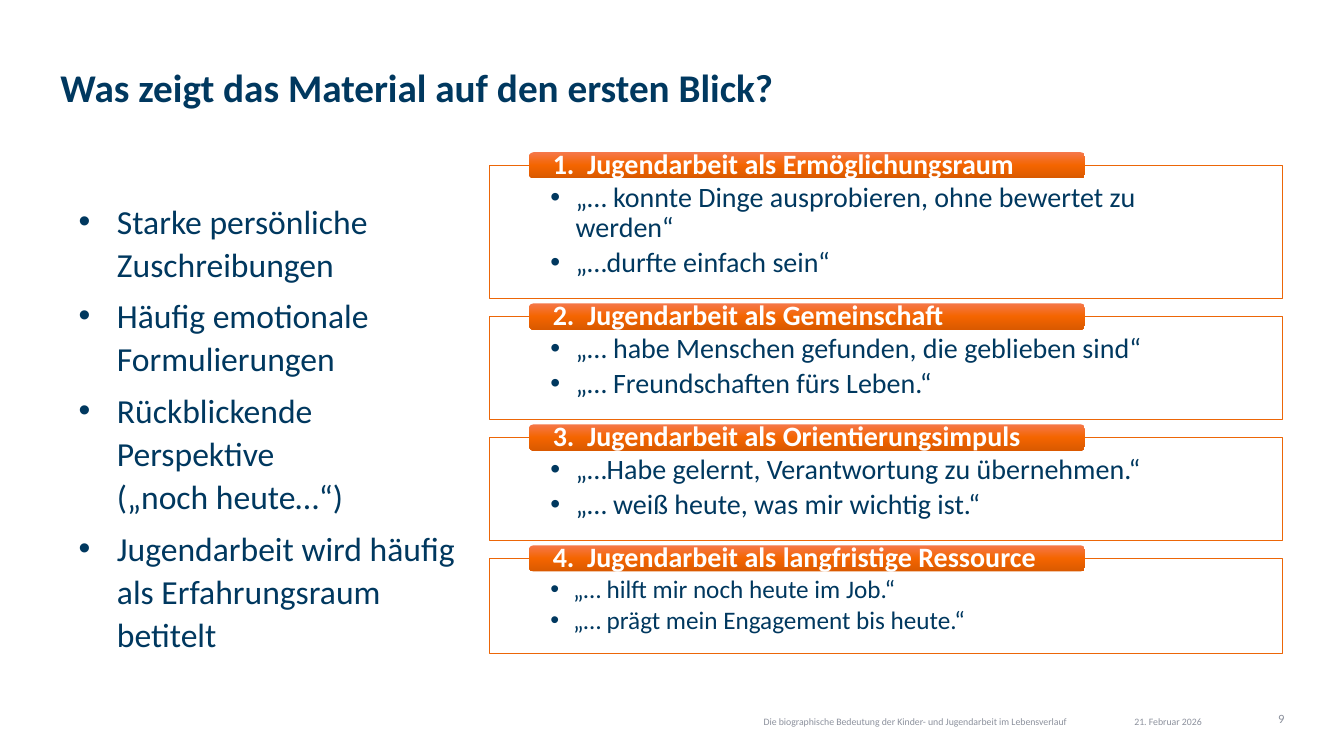
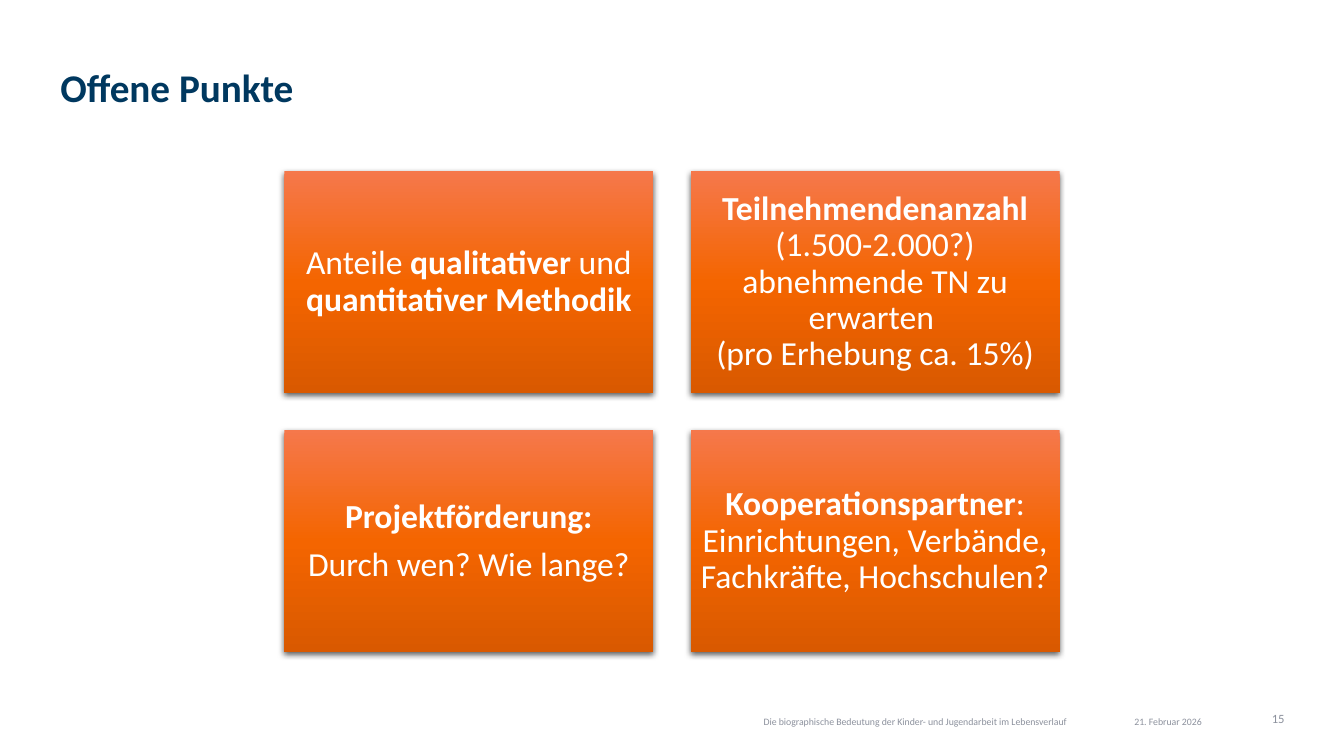
from copy import deepcopy

from lxml.etree import SubElement
from pptx import Presentation
from pptx.dml.color import RGBColor
from pptx.enum.shapes import MSO_SHAPE
from pptx.enum.text import MSO_ANCHOR, PP_ALIGN
from pptx.oxml.ns import qn
from pptx.util import Inches, Pt

# Shared colours and text styles
NAVY, GREY, WHITE, ORANGE = "00385F", "8C919D", "FFFFFF", "EC6608"
FADE = ((0, "F5784B"), (0.5, "F46500"), (1, "D95900"))
TITLE = dict(size=28, hue=NAVY, bold=True)
FOOT = dict(size=7, hue=GREY, after=6)
NOTE = "Die biographische Bedeutung der Kinder- und Jugendarbeit im Lebensverlauf"
DATE = "21. Februar 2026"


def paint(color, code):
    color.rgb = RGBColor.from_string(code)


def apply(target, values):
    for name, value in values.items():
        setattr(target, name, value)


def write(shape, paras, size, hue, bold=False, align=PP_ALIGN.LEFT, lines=0.9,
          after=0, hang=0, bullet=False, inset=(0, 0, 0, 0),
          anchor=MSO_ANCHOR.TOP):
    """Fill a shape; each paragraph is a string or a list of (text, bold)."""
    frame = shape.text_frame
    sides = ("margin_left", "margin_top", "margin_right", "margin_bottom")
    apply(frame, dict(zip(sides, map(Inches, inset))))
    apply(frame, dict(word_wrap=True, vertical_anchor=anchor))
    for i, runs in enumerate(paras):
        para = frame.add_paragraph() if i else frame.paragraphs[0]
        props = para._p.get_or_add_pPr()
        if hang:
            props.set("marL", str(Inches(hang)))
            props.set("indent", str(-Inches(hang)))
        if bullet:
            SubElement(props, qn("a:buFont")).set("typeface", "Arial")
            SubElement(props, qn("a:buChar")).set("char", "•")
        apply(para, dict(alignment=align, line_spacing=lines,
                         space_before=Pt(0), space_after=Pt(after)))
        if isinstance(runs, str):
            runs = [(runs, bold)]
        for text, strong in runs:
            for j, part in enumerate(text.split("\n")):
                if j:
                    para.add_line_break()
                run = para.add_run()
                run.text = part
                apply(run.font, dict(name="Calibri", size=Pt(size), bold=strong))
                paint(run.font.color, hue)


def label(slide, box, paras, **style):
    write(slide.shapes.add_textbox(*map(Inches, box)), paras, **style)


def block(slide, box, kind=MSO_SHAPE.RECTANGLE):
    shape = slide.shapes.add_shape(kind, *map(Inches, box))
    shape.shadow.inherit = False
    return shape


def shade(shape):
    """Orange fade from top to bottom, without outline."""
    shape.line.fill.background()
    fill = shape.fill
    fill.gradient()
    fill.gradient_angle = 270
    stops = shape._element.spPr.find(".//" + qn("a:gsLst"))
    stops.insert(1, deepcopy(stops[0]))
    for stop, (place, code) in zip(fill.gradient_stops, FADE):
        stop.position = place
        paint(stop.color, code)


def lift(shape):
    """Soft drop shadow."""
    effects = shape._element.spPr.find(qn("a:effectLst"))
    outer = SubElement(effects, qn("a:outerShdw"), blurRad=str(Pt(4.5)),
                       dist=str(Pt(1.5)), dir="5400000", rotWithShape="0")
    black = SubElement(outer, qn("a:srgbClr"), val="000000")
    SubElement(black, qn("a:alpha"), val="63000")


def start(deck, title, number):
    """Slide with title and footer."""
    slide = deck.slides.add_slide(deck.slide_layouts[6])
    label(slide, (0.6, 0.68, 12.13, 0.63), [title], **TITLE)
    label(slide, (10.76, 7.06, 1.65, 0.16), [DATE], align=PP_ALIGN.CENTER,
          inset=(0, 0.05, 0, 0), **FOOT)
    label(slide, (5.88, 7.06, 4.72, 0.16), [NOTE], align=PP_ALIGN.RIGHT,
          inset=(0, 0.05, 0.02, 0), **FOOT)
    label(slide, (12.42, 7.06, 0.32, 0.16), [number], align=PP_ALIGN.RIGHT,
          inset=(0, 0.01, 0, 0), **(FOOT | dict(size=9)))
    return slide


def panel(slide, box, head, quotes, size):
    """Framed quotes with a heading tab across the top edge."""
    left, top, width, _ = box
    frame = block(slide, box)
    frame.fill.solid()
    paint(frame.fill.fore_color, WHITE)
    paint(frame.line.color, ORANGE)
    frame.line.width = Pt(0.5)
    write(frame, quotes, size, NAVY, after=0.17 * size, hang=size / 80,
          bullet=True, inset=(0.61, 0.18, 0.61, 0.16))
    tab = block(slide, (left + 0.4, top - 0.13, width * 0.7, 0.26),
                MSO_SHAPE.ROUNDED_RECTANGLE)
    shade(tab)
    write(tab, [head], 20, WHITE, bold=True, hang=0.34,
          inset=(0.22, 0, 0.22, 0), anchor=MSO_ANCHOR.MIDDLE)


def stack(slide, box, gap, panels):
    """Panels one below the other."""
    left, top, width = box
    for i, (height, size, head, quotes) in enumerate(panels, 1):
        panel(slide, (left, top, width, height), f"{i}.\t{head}", quotes, size)
        top += height + gap


def grid(slide, box, gap, cards):
    """Cards in two columns and two rows."""
    left, top, width, height = box
    wide, high = (width - gap) / 2, (height - gap) / 2
    for i, paras in enumerate(cards):
        row, col = divmod(i, 2)
        card = block(slide, (left + col * (wide + gap),
                             top + row * (high + gap), wide, high))
        shade(card)
        lift(card)
        write(card, paras, 24, WHITE, align=PP_ALIGN.CENTER, after=8.4,
              inset=(0.1,) * 4, anchor=MSO_ANCHOR.MIDDLE)


POINTS = [
    "Starke persönliche Zuschreibungen",
    "Häufig emotionale Formulierungen",
    "Rückblickende Perspektive \n(„noch heute…“)",
    "Jugendarbeit wird häufig als Erfahrungsraum betitelt",
]
# Height, text size, heading, quotes
PANELS = [
    (1.32, 20, "Jugendarbeit als Ermöglichungsraum",
     ["„… konnte Dinge ausprobieren, ohne bewertet zu werden“",
      "„…durfte einfach sein“"]),
    (1.02, 20, "Jugendarbeit als Gemeinschaft",
     ["„… habe Menschen gefunden, die geblieben sind“",
      "„… Freundschaften fürs Leben.“"]),
    (1.02, 20, "Jugendarbeit als Orientierungsimpuls",
     ["„…Habe gelernt, Verantwortung zu übernehmen.“",
      "„… weiß heute, was mir wichtig ist.“"]),
    (0.94, 18, "Jugendarbeit als langfristige Ressource",
     ["„… hilft mir noch heute im Job.“",
      "„… prägt mein Engagement bis heute.“"]),
]
CARDS = [
    [[("Anteile ", False), ("qualitativer", True), (" und ", False),
      ("quantitativer Methodik", True)]],
    [[("Teilnehmendenanzahl", True),
      (" (1.500-2.000?) abnehmende TN zu erwarten \n(pro Erhebung ca. 15%)",
       False)]],
    [[("Projektförderung:", True)], "Durch wen? Wie lange?"],
    [[("Kooperationspartner", True),
      (": Einrichtungen, Verbände, Fachkräfte, Hochschulen?", False)]],
]


def main():
    deck = Presentation()
    apply(deck, dict(slide_width=Inches(13.33), slide_height=Inches(7.5)))

    # First look at the material
    slide = start(deck, "Was zeigt das Material auf den ersten Blick?", "9")
    label(slide, (0.78, 1.94, 3.78, 4.88), POINTS, size=24, hue=NAVY,
          lines=1.07, after=6, hang=0.38, bullet=True, inset=(0, 0.02, 0, 0))
    stack(slide, (4.85, 1.64, 7.87), 0.18, PANELS)

    # Open points
    slide = start(deck, "Offene Punkte", "15")
    grid(slide, (2.82, 1.7, 7.69, 4.77), 0.37, CARDS)

    deck.save("out.pptx")


if __name__ == "__main__":
    main()
